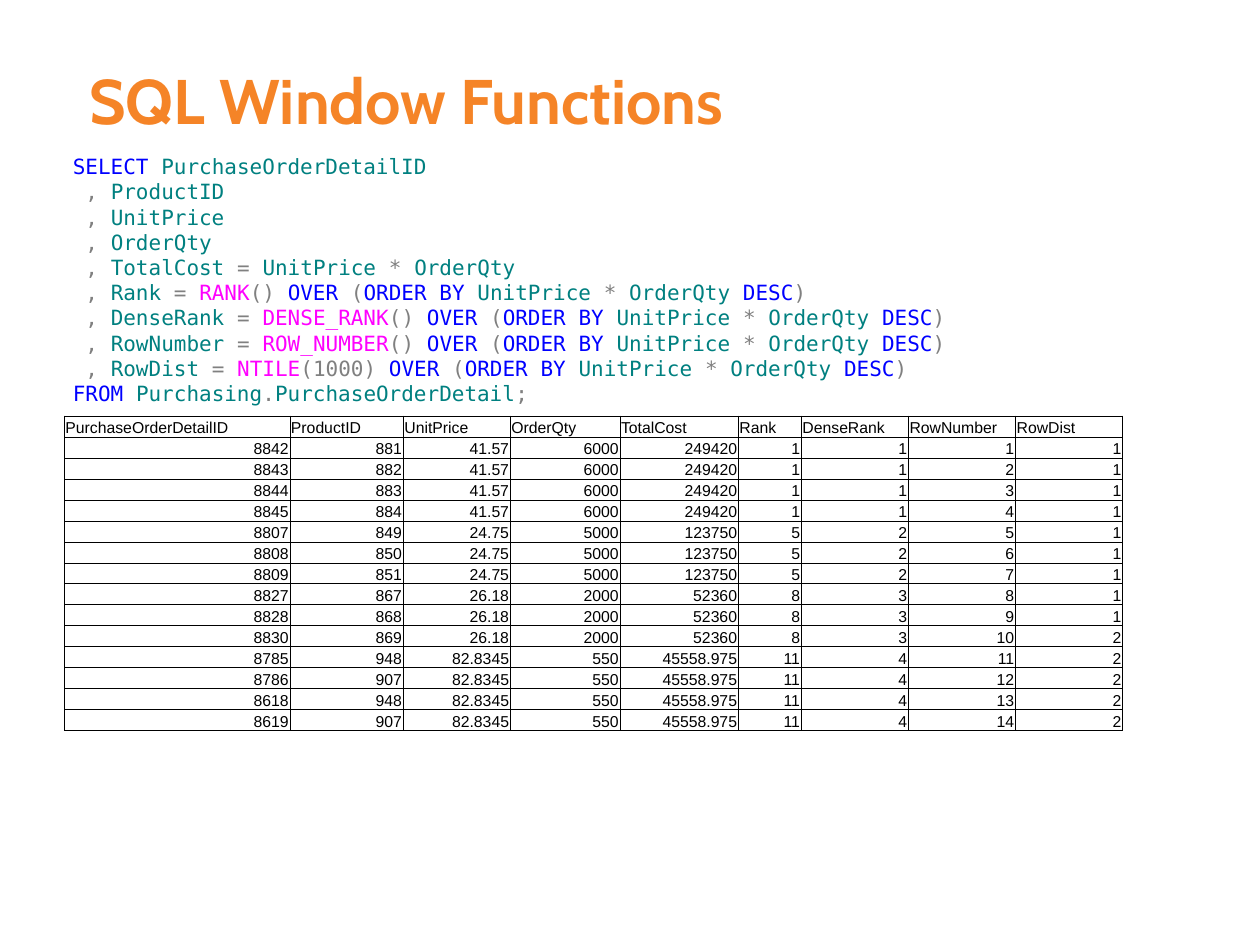
"""Build a slide showing SQL window functions with their query and result table."""
from itertools import groupby

from lxml import etree
from pptx import Presentation
from pptx.dml.color import RGBColor
from pptx.enum.text import MSO_ANCHOR, PP_ALIGN
from pptx.oxml.ns import qn
from pptx.util import Inches, Pt

MIDDLE, BOTTOM = MSO_ANCHOR.MIDDLE, MSO_ANCHOR.BOTTOM
LEFT, RIGHT = PP_ALIGN.LEFT, PP_ALIGN.RIGHT

ORANGE = RGBColor(0xF5, 0x84, 0x27)
BLUE = RGBColor(0x00, 0x00, 0xFF)
TEAL = RGBColor(0x00, 0x80, 0x80)
GRAY = RGBColor(0x80, 0x80, 0x80)
MAGENTA = RGBColor(0xFF, 0x00, 0xFF)
BLACK = RGBColor(0x00, 0x00, 0x00)

TITLE = "SQL Window Functions"
QUERY = [
    "SELECT PurchaseOrderDetailID",
    " , ProductID",
    " , UnitPrice",
    " , OrderQty",
    " , TotalCost = UnitPrice * OrderQty",
    " , Rank = RANK() OVER (ORDER BY UnitPrice * OrderQty DESC)",
    " , DenseRank = DENSE_RANK() OVER (ORDER BY UnitPrice * OrderQty DESC)",
    " , RowNumber = ROW_NUMBER() OVER (ORDER BY UnitPrice * OrderQty DESC)",
    " , RowDist = NTILE(1000) OVER (ORDER BY UnitPrice * OrderQty DESC)",
    "FROM Purchasing.PurchaseOrderDetail;",
]
KEYWORDS = {"SELECT", "FROM", "OVER", "ORDER", "BY", "DESC"}
FUNCTIONS = {"RANK", "DENSE_RANK", "ROW_NUMBER", "NTILE"}

COLUMNS = [
    ("PurchaseOrderDetailID", 1.79), ("ProductID", 0.9), ("UnitPrice", 0.85),
    ("OrderQty", 0.87), ("TotalCost", 0.94), ("Rank", 0.5),
    ("DenseRank", 0.85), ("RowNumber", 0.85), ("RowDist", 0.85),
]
RESULTS = [
    (8842, 881, 41.57, 6000, 249420, 1, 1, 1, 1),
    (8843, 882, 41.57, 6000, 249420, 1, 1, 2, 1),
    (8844, 883, 41.57, 6000, 249420, 1, 1, 3, 1),
    (8845, 884, 41.57, 6000, 249420, 1, 1, 4, 1),
    (8807, 849, 24.75, 5000, 123750, 5, 2, 5, 1),
    (8808, 850, 24.75, 5000, 123750, 5, 2, 6, 1),
    (8809, 851, 24.75, 5000, 123750, 5, 2, 7, 1),
    (8827, 867, 26.18, 2000, 52360, 8, 3, 8, 1),
    (8828, 868, 26.18, 2000, 52360, 8, 3, 9, 1),
    (8830, 869, 26.18, 2000, 52360, 8, 3, 10, 2),
    (8785, 948, 82.8345, 550, 45558.975, 11, 4, 11, 2),
    (8786, 907, 82.8345, 550, 45558.975, 11, 4, 12, 2),
    (8618, 948, 82.8345, 550, 45558.975, 11, 4, 13, 2),
    (8619, 907, 82.8345, 550, 45558.975, 11, 4, 14, 2),
]
TITLE_BOX = (0.51, 0.42, 6.32, 0.74)
QUERY_BOX = (0.48, 1.17, 8.93, 2.12)
TABLE_BOX = (0.51, 3.3, sum(width for _, width in COLUMNS), 2.5)


def set_font(font, name, size, color=None):
    font.name, font.size = name, Pt(size)
    if color is not None:
        font.color.rgb = color


def add_text_frame(slide, box):
    frame = slide.shapes.add_textbox(*map(Inches, box)).text_frame
    frame.word_wrap = True
    return frame


def add_title(slide):
    frame = add_text_frame(slide, TITLE_BOX)
    frame.vertical_anchor = MIDDLE
    frame.margin_left = frame.margin_right = 0
    paragraph = frame.paragraphs[0]
    paragraph.text = TITLE
    paragraph._p.get_or_add_pPr().set("marL", str(Inches(0.2)))
    set_font(paragraph.font, "Cabin", 36, ORANGE)
    paragraph.font.bold = True


def character_class(character):
    if character.isspace():
        return "space"
    return "word" if character.isalnum() or character == "_" else "symbol"


def token_color(token):
    if token.isspace():
        return BLACK
    if token in KEYWORDS:
        return BLUE
    if token in FUNCTIONS:
        return MAGENTA
    return TEAL if token[0].isalpha() else GRAY


def add_query(slide):
    frame = add_text_frame(slide, QUERY_BOX)
    for index, line in enumerate(QUERY):
        paragraph = frame.add_paragraph() if index else frame.paragraphs[0]
        paragraph.line_spacing = Pt(14.4)
        set_font(paragraph.font, "DejaVu Sans Mono", 12)
        for _, characters in groupby(line, character_class):
            run = paragraph.add_run()
            run.text = "".join(characters)
            set_font(run.font, "DejaVu Sans Mono", 12, token_color(run.text))


def add_borders(cell):
    properties = cell._tc.get_or_add_tcPr()
    for side in ("a:lnL", "a:lnR", "a:lnT", "a:lnB"):
        line = etree.SubElement(properties, qn(side), w=str(Pt(0.25)))
        fill = etree.SubElement(line, qn("a:solidFill"))
        etree.SubElement(fill, qn("a:srgbClr"), val=str(BLACK))


def fill_cell(cell, value, alignment):
    cell.margin_left = cell.margin_right = cell.margin_top = Inches(0.01)
    cell.margin_bottom = 0
    cell.vertical_anchor = BOTTOM
    add_borders(cell)
    cell.fill.background()
    paragraph = cell.text_frame.paragraphs[0]
    paragraph.text = str(value)
    paragraph.alignment = alignment
    set_font(paragraph.font, "Arial", 9, BLACK)


def add_results(slide):
    rows = [[name for name, _ in COLUMNS], *RESULTS]
    table = slide.shapes.add_table(len(rows), len(COLUMNS), *map(Inches, TABLE_BOX)).table
    table.first_row = table.horz_banding = False
    for column, (_, width) in zip(table.columns, COLUMNS):
        column.width = Inches(width)
    for row_index, values in enumerate(rows):
        for column_index, value in enumerate(values):
            alignment = RIGHT if row_index else LEFT
            fill_cell(table.cell(row_index, column_index), value, alignment)


def main():
    presentation = Presentation()
    presentation.slide_width, presentation.slide_height = Inches(10), Inches(7.5)
    slide = presentation.slides.add_slide(presentation.slide_layouts[6])
    add_title(slide)
    add_query(slide)
    add_results(slide)
    presentation.save("out.pptx")


if __name__ == "__main__":
    main()
